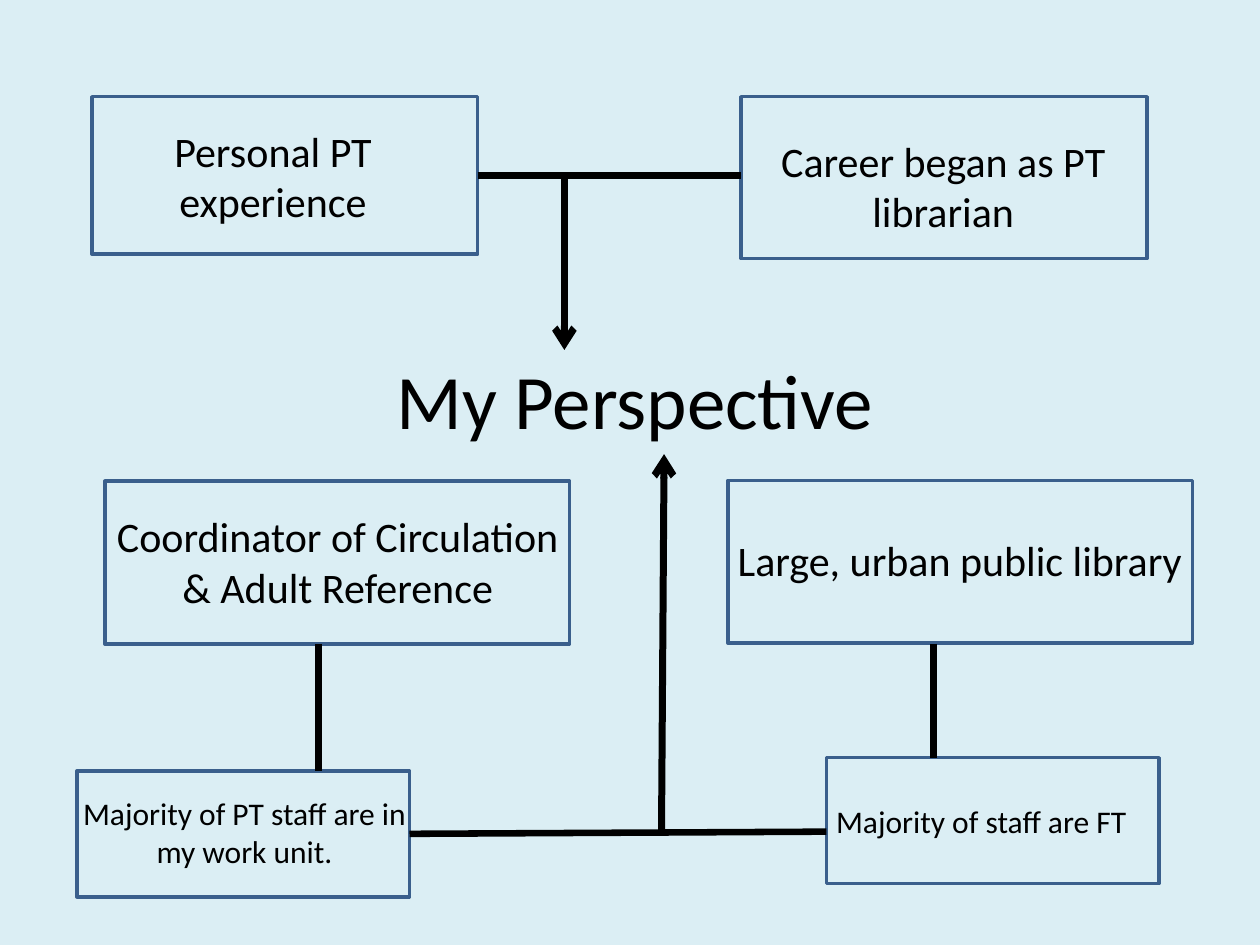
from dataclasses import dataclass
from typing import NamedTuple, Optional

from lxml.etree import SubElement
from pptx import Presentation
from pptx.dml.color import RGBColor
from pptx.enum.shapes import MSO_CONNECTOR, MSO_SHAPE
from pptx.enum.text import MSO_ANCHOR, PP_ALIGN
from pptx.oxml.ns import qn
from pptx.shapes.autoshape import Shape
from pptx.slide import Slide
from pptx.util import Pt

LEFT_SIDE, RIGHT_SIDE = 1, 3


@dataclass(frozen=True)
class Theme:
    font: str = "Calibri"
    background: RGBColor = RGBColor(0xDB, 0xEE, 0xF4)
    ink: RGBColor = RGBColor(0, 0, 0)
    frame: RGBColor = RGBColor(0x3A, 0x5F, 0x8C)
    title_size: float = 44
    large_size: float = 24
    small_size: float = 18
    frame_width: float = 2
    link_width: float = 3.75
    arrow_width: float = 4


class Area(NamedTuple):
    left: float
    top: float
    width: float
    height: float


class Point(NamedTuple):
    x: float
    y: float


@dataclass(frozen=True)
class Fact:
    text: str
    size: float
    label: Area
    frame: Area


@dataclass(frozen=True)
class Link:
    start: Point
    end: Point
    width: float
    arrow: bool = False
    start_fact: Optional[str] = None
    start_side: int = RIGHT_SIDE


THEME = Theme()

TITLE_AREA = Area(174, 192, 378, 72)

FACTS = {
    "coordinator": Fact("Coordinator of Circulation & Adult Reference", THEME.large_size,
                        Area(52, 288, 282, 65.5), Area(60, 275, 265.5, 93)),
    "library": Fact("Large, urban public library", THEME.large_size,
                    Area(407.5, 301.5, 282, 37), Area(416, 274.5, 265.5, 93)),
    "full_time": Fact("Majority of staff are FT", THEME.small_size,
                      Area(460, 454.5, 201.5, 29), Area(472.25, 433, 190, 72)),
    "part_time": Fact("Majority of PT staff are in my work unit.", THEME.small_size,
                      Area(39, 450, 201.5, 51), Area(44, 440.5, 190, 72)),
    "career": Fact("Career began as PT librarian", THEME.large_size,
                   Area(416, 73.5, 246, 65.5), Area(423.5, 55.25, 232, 92.5)),
    "experience": Fact("Personal PT experience", THEME.large_size,
                       Area(39, 67.5, 234, 65.5), Area(52.5, 55.25, 220.5, 90)),
}

LINKS = [
    Link(Point(533.5, 368), Point(533.5, 433), THEME.link_width),
    Link(Point(182, 368), Point(182, 440.5), THEME.link_width),
    Link(Point(234, 476.5), Point(472.25, 475.25), THEME.link_width, start_fact="part_time"),
    Link(Point(378, 475.25), Point(379.5, 259.5), THEME.arrow_width, arrow=True),
    Link(Point(273, 100.25), Point(423.5, 100.25), THEME.arrow_width, start_fact="experience"),
    Link(Point(322.5, 101.5), Point(322.5, 200), THEME.arrow_width, arrow=True),
]


def add_label(slide: Slide, text: str, size: float, area: Area) -> None:
    frame = slide.shapes.add_textbox(*map(Pt, area)).text_frame
    frame.word_wrap = True
    frame.vertical_anchor = MSO_ANCHOR.MIDDLE
    paragraph = frame.paragraphs[0]
    paragraph.text = text
    paragraph.alignment = PP_ALIGN.CENTER
    paragraph.font.name = THEME.font
    paragraph.font.size = Pt(size)
    paragraph.font.color.rgb = THEME.ink


def add_fact(slide: Slide, fact: Fact) -> Shape:
    """Draw the label and its outline, and return the outline."""
    add_label(slide, fact.text, fact.size, fact.label)
    outline = slide.shapes.add_shape(MSO_SHAPE.RECTANGLE, *map(Pt, fact.frame))
    outline.shadow.inherit = False
    outline.fill.background()
    outline.line.color.rgb = THEME.frame
    outline.line.width = Pt(THEME.frame_width)
    return outline


def add_link(slide: Slide, link: Link, outlines: dict[str, Shape]) -> None:
    connector = slide.shapes.add_connector(
        MSO_CONNECTOR.STRAIGHT, *map(Pt, (*link.start, *link.end)))
    if link.start_fact:
        connector.begin_connect(outlines[link.start_fact], link.start_side)
    connector.line.color.rgb = THEME.ink
    connector.line.width = Pt(link.width)
    properties = connector._element.spPr
    if link.arrow:
        SubElement(properties.find(qn("a:ln")), qn("a:tailEnd"), type="arrow")
    SubElement(properties, qn("a:effectLst"))


def main() -> None:
    deck = Presentation()
    deck.slide_width, deck.slide_height = Pt(720), Pt(540)
    slide = deck.slides.add_slide(deck.slide_layouts[6])
    slide.background.fill.solid()
    slide.background.fill.fore_color.rgb = THEME.background

    add_label(slide, "My Perspective", THEME.title_size, TITLE_AREA)
    outlines = {key: add_fact(slide, fact) for key, fact in FACTS.items()}
    for link in LINKS:
        add_link(slide, link, outlines)
    deck.save("out.pptx")


if __name__ == "__main__":
    main()
